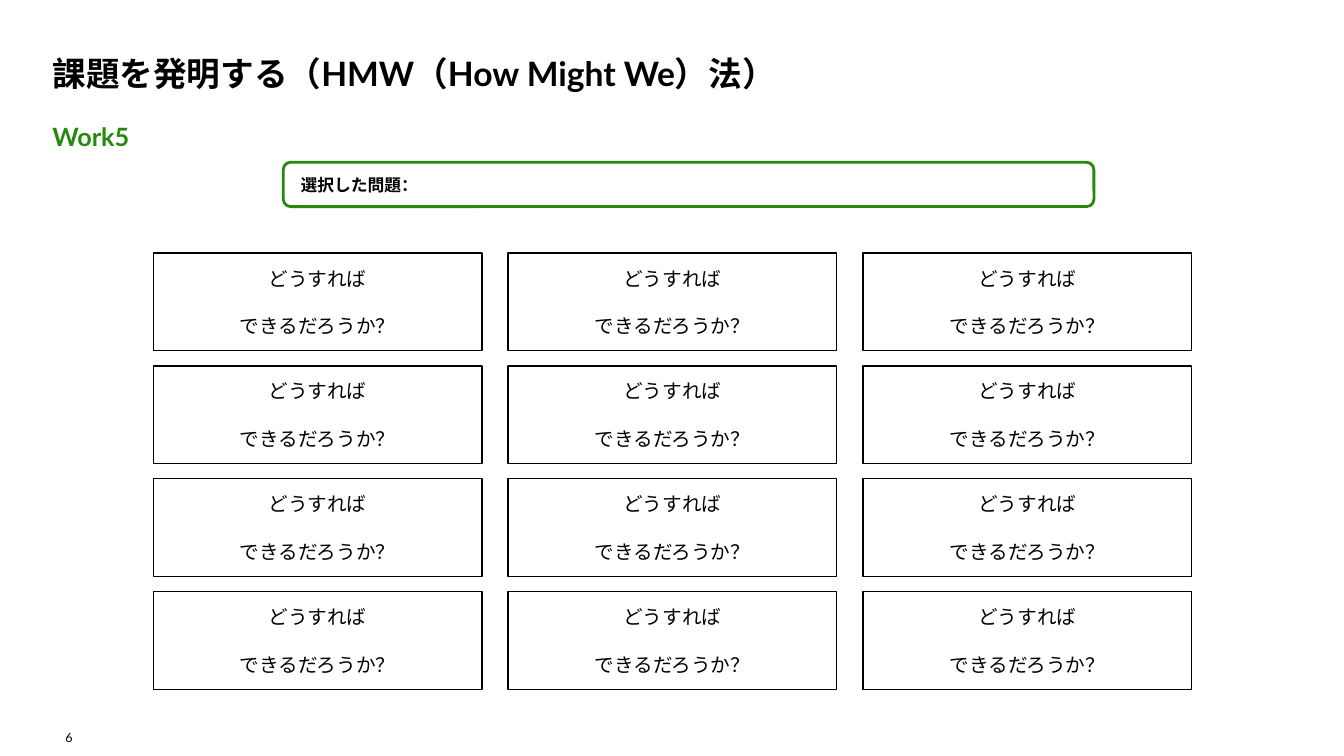
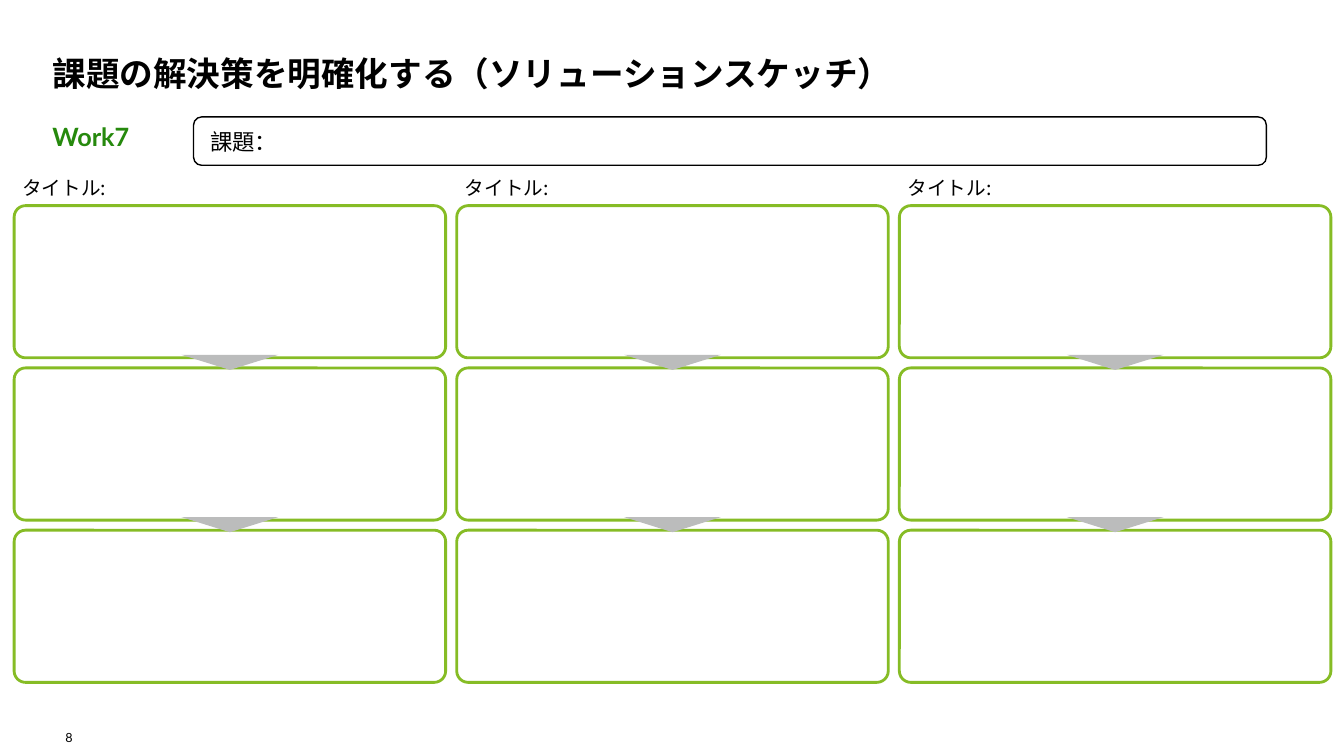
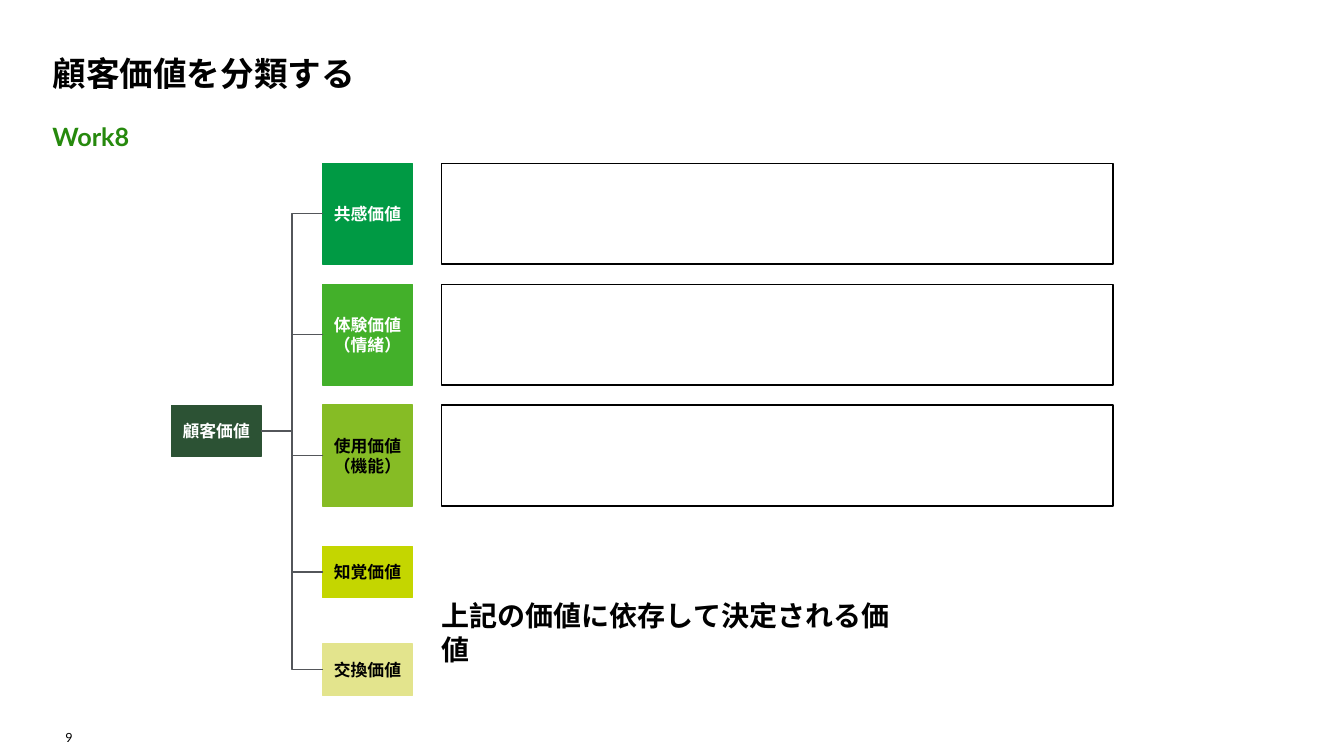
from lxml import etree
from pptx import Presentation
from pptx.dml.color import RGBColor
from pptx.enum.shapes import MSO_CONNECTOR, MSO_SHAPE
from pptx.enum.text import MSO_ANCHOR, MSO_AUTO_SIZE, PP_ALIGN
from pptx.oxml.ns import qn
from pptx.util import Inches, Pt

RECTANGLE, ROUNDED = MSO_SHAPE.RECTANGLE, MSO_SHAPE.ROUNDED_RECTANGLE
TRIANGLE = MSO_SHAPE.ISOSCELES_TRIANGLE
STRAIGHT, ELBOW = MSO_CONNECTOR.STRAIGHT, MSO_CONNECTOR.ELBOW
TOP, MIDDLE, BOTTOM = MSO_ANCHOR.TOP, MSO_ANCHOR.MIDDLE, MSO_ANCHOR.BOTTOM
LEFT, CENTER, RIGHT = PP_ALIGN.LEFT, PP_ALIGN.CENTER, PP_ALIGN.RIGHT
NO_AUTOFIT = MSO_AUTO_SIZE.NONE

BLACK = RGBColor(0x00, 0x00, 0x00)
WHITE = RGBColor(0xFF, 0xFF, 0xFF)
GREEN = RGBColor(0x26, 0x89, 0x0D)
LIME = RGBColor(0x86, 0xBC, 0x25)
LIGHT_GRAY = RGBColor(0xBB, 0xBC, 0xBC)
DARK_GRAY = RGBColor(0x53, 0x56, 0x5A)
DARK_GREEN = RGBColor(0x2C, 0x52, 0x34)
EMERALD = RGBColor(0x00, 0x9A, 0x44)
MID_GREEN = RGBColor(0x43, 0xB0, 0x2A)
YELLOW_GREEN = RGBColor(0xC4, 0xD6, 0x00)
PALE_YELLOW = RGBColor(0xE3, 0xE4, 0x8D)

LATO, CALIBRI, ARIAL, NOTO = "Lato", "Calibri", "Arial", "Noto Sans CJK JP"


def write(shape, lines, font, size, color=BLACK, bold=False, align=LEFT,
          anchor=MIDDLE, insets=(0, 0), gap=0, wrap=True):
    frame = shape.text_frame
    frame.auto_size = NO_AUTOFIT
    frame.word_wrap = wrap
    frame.vertical_anchor = anchor
    frame.margin_left = frame.margin_right = Inches(insets[0])
    frame.margin_top = frame.margin_bottom = Inches(insets[1])
    for index, line in enumerate(lines):
        paragraph = frame.add_paragraph() if index else frame.paragraphs[0]
        paragraph.text = line
        paragraph.alignment = align
        paragraph.space_before = Pt(gap if index else 0)
        paragraph.font.name = font
        paragraph.font.size = Pt(size)
        paragraph.font.bold = bold
        paragraph.font.color.rgb = color


def add_box(slide, kind, left, top, width, height, fill, line, line_width=1):
    shape = slide.shapes.add_shape(
        kind, Inches(left), Inches(top), Inches(width), Inches(height))
    shape.shadow.inherit = False
    if fill is None:
        shape.fill.background()
    else:
        shape.fill.solid()
        shape.fill.fore_color.rgb = fill
    if line is None:
        shape.line.fill.background()
    else:
        shape.line.color.rgb = line
        shape.line.width = Pt(line_width)
    return shape


presentation = Presentation()
presentation.slide_width = Inches(13.33)
presentation.slide_height = Inches(7.5)
title_only = presentation.slide_layouts[5]

# Title, work label and page number on every slide
slides = []
for title_text, work, page in [
    ("課題を発明する（HMW（How Might We）法）", "Work5", "6"),
    ("課題の解決策を明確化する（ソリューションスケッチ）", "Work7", "8"),
    ("顧客価値を分類する", "Work8", "9"),
]:
    slide = presentation.slides.add_slide(title_only)
    title = slide.shapes.title
    title.left, title.top = Inches(0.52), Inches(0.12)
    title.width, title.height = Inches(12.28), Inches(0.81)
    write(title, [title_text], LATO, 24, bold=True, anchor=BOTTOM)
    label = slide.shapes.add_textbox(
        Inches(0.52), Inches(1.1), Inches(12.28), Inches(0.51))
    write(label, [work], LATO, 18, GREEN, bold=True)
    number = slide.shapes.add_textbox(
        Inches(0.52), Inches(7.2), Inches(0.2), Inches(0.19))
    write(number, [page], LATO, 9, align=RIGHT, anchor=BOTTOM, wrap=False)
    slides.append(slide)
question_slide, sketch_slide, value_slide = slides

# Slide 1: chosen problem and a grid of questions
problem = add_box(question_slide, ROUNDED, 2.81, 1.61, 8.04, 0.44, WHITE, GREEN, 2)
write(problem, ["選択した問題："], CALIBRI, 12, bold=True, insets=(0.15, 0))
for row in range(4):
    for column in range(3):
        question = add_box(question_slide, RECTANGLE, 1.52 + 3.52 * column,
                           2.51 + 1.12 * row, 3.26, 0.97, WHITE, BLACK)
        write(question, ["どうすれば", "できるだろうか？"], CALIBRI, 14,
              align=CENTER, gap=17)

# Slide 2: issue and three columns of sketch panels
issue = add_box(sketch_slide, ROUNDED, 1.92, 1.16, 10.64, 0.48, None, BLACK)
write(issue, ["課題："], NOTO, 16, insets=(0.14, 0.07))
for column in range(3):
    left = 0.14 + 4.39 * column
    heading = sketch_slide.shapes.add_textbox(
        Inches(left + 0.08), Inches(1.75), Inches(3.81), Inches(0.24))
    write(heading, ["タイトル:"], NOTO, 14, anchor=TOP)
    for row in range(3):
        panel = add_box(sketch_slide, ROUNDED, left, 2.04 + 1.61 * row,
                        4.28, 1.51, WHITE, LIME, 2)
        panel.adjustments[0] = 0.075
    for row in range(2):
        arrow = add_box(sketch_slide, TRIANGLE, left + 1.66, 3.52 + 1.61 * row,
                        0.96, 0.15, LIGHT_GRAY, None)
        arrow.rotation = 180

# Slide 3: value tree
root = add_box(value_slide, RECTANGLE, 1.7, 4.02, 0.89, 0.51, DARK_GREEN, DARK_GREEN)
write(root, ["顧客価値"], ARIAL, 12, WHITE, bold=True, align=CENTER)
branches = []
for lines, top, height, fill, color in [
    (["共感価値"], 1.62, 1, EMERALD, WHITE),
    (["体験価値", "（情緒）"], 2.82, 1, MID_GREEN, WHITE),
    (["使用価値", "（機能）"], 4.02, 1, LIME, BLACK),
    (["知覚価値"], 5.42, 0.51, YELLOW_GREEN, BLACK),
    (["交換価値"], 6.39, 0.51, PALE_YELLOW, BLACK),
]:
    branch = add_box(value_slide, RECTANGLE, 3.2, top, 0.89, height, fill, fill)
    write(branch, lines, ARIAL, 12, color, bold=True, align=CENTER)
    branches.append(branch)

# Connectors: elbows to the outer branches, stubs to the inner ones
for branch in branches:
    middle = branch.top + branch.height // 2
    if branch in (branches[0], branches[-1]):
        connector = value_slide.shapes.add_connector(ELBOW, 0, 0, 0, 0)
        connector.begin_connect(root, 3)
        connector.end_connect(branch, 1)
    else:
        connector = value_slide.shapes.add_connector(
            STRAIGHT, branch.left, middle, Inches(2.9), middle)
        connector.begin_connect(branch, 1)
    connector.line.color.rgb = DARK_GRAY
    connector.line.width = Pt(1)
    etree.SubElement(connector._element.spPr, qn("a:effectLst"))

# Answer boxes and closing note
for row in range(3):
    add_box(value_slide, RECTANGLE, 4.38, 1.62 + 1.2 * row, 6.66, 1, WHITE, BLACK)
note = value_slide.shapes.add_textbox(
    Inches(4.38), Inches(5.94), Inches(4.67), Inches(0.34))
write(note, ["上記の価値に依存して決定される価値"], ARIAL, 20, bold=True, anchor=TOP)

presentation.save("out.pptx")
